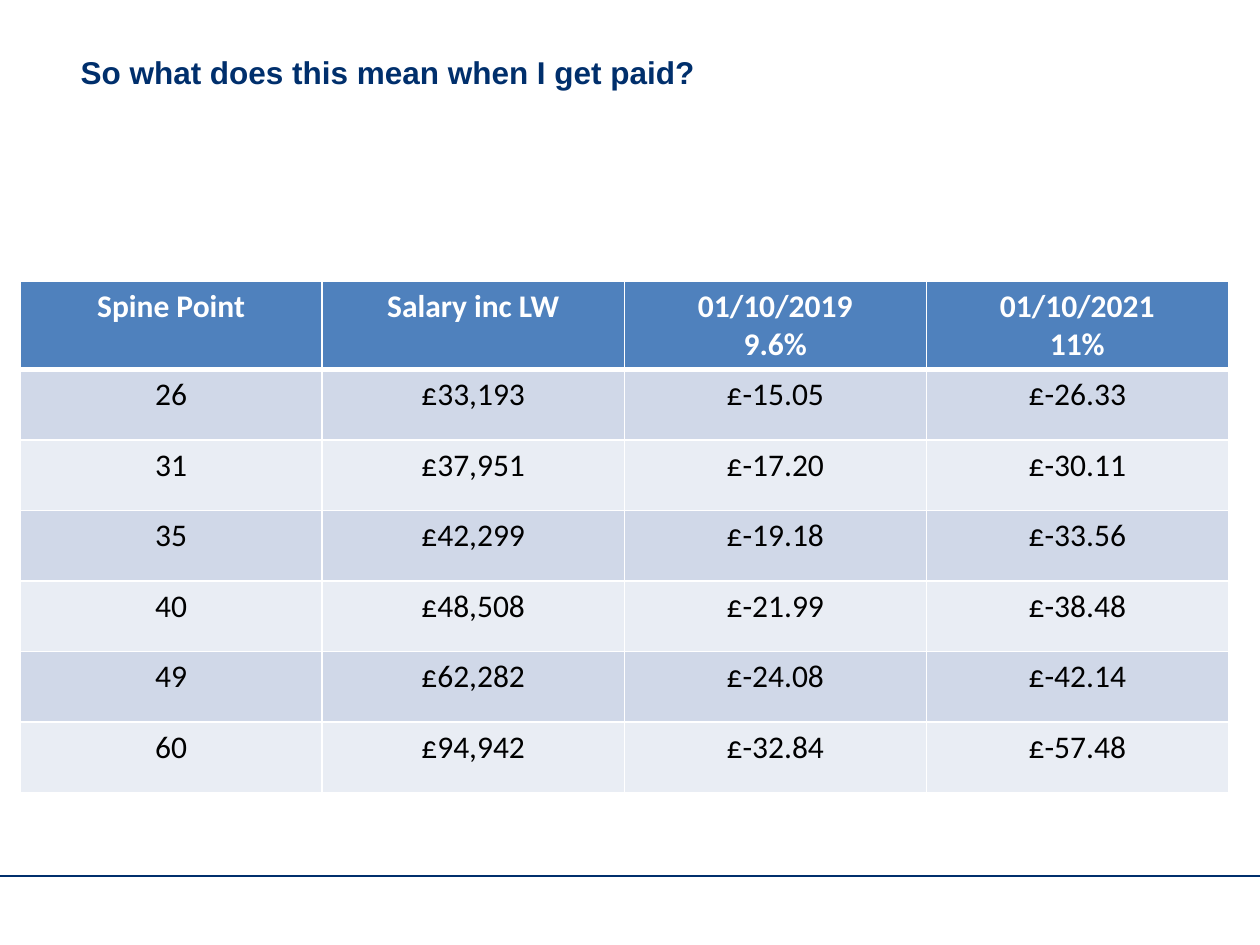
from lxml.etree import SubElement as sub
from pptx import Presentation
from pptx.dml.color import RGBColor as RGB
from pptx.enum.shapes import MSO_CONNECTOR as Conn
from pptx.enum.text import MSO_ANCHOR as Anchor, MSO_AUTO_SIZE as Auto, PP_ALIGN as Align
from pptx.oxml.ns import qn
from pptx.util import Inches, Pt

WIDE, HIGH = 10, 7.5
COLS = {"navy": "002F6C", "head": "4F81BD", "odd": "D0D8E8",
        "even": "E9EDF4", "white": "FFFFFF", "black": "000000"}
ROWS = [
    ("Spine Point", "Salary inc LW", "01/10/2019\n9.6%", "01/10/2021\n11%"),
    ("26", "£33,193", "£-15.05", "£-26.33"),
    ("31", "£37,951", "£-17.20", "£-30.11"),
    ("35", "£42,299", "£-19.18", "£-33.56"),
    ("40", "£48,508", "£-21.99", "£-38.48"),
    ("49", "£62,282", "£-24.08", "£-42.14"),
    ("60", "£94,942", "£-32.84", "£-57.48"),
]


def tint(name):
    return RGB.from_string(COLS[name])


def style(font, face, color, bold):
    font.name, font.size, font.bold = face, Pt(18), bold
    font.color.rgb = tint(color)


def add_rule(slide, y):
    rule = slide.shapes.add_connector(
        Conn.STRAIGHT, 0, Inches(y), Inches(WIDE), Inches(y))
    rule.line.color.rgb = tint("navy")
    rule.line.width = Pt(1)
    sub(rule._element.spPr, qn("a:effectLst"))


def set_title(slide, text):
    title = slide.shapes.title
    title.left, title.top = Inches(0.54), Inches(0.37)
    title.width, title.height = Inches(5.32), Inches(0.4)
    frame = title.text_frame
    frame.text = text
    frame.word_wrap = True
    frame.auto_size = Auto.SHAPE_TO_FIT_TEXT
    frame.vertical_anchor = Anchor.TOP
    para = frame.paragraphs[0]
    para.alignment = Align.LEFT
    style(para.runs[0].font, "Arial", "navy", True)


def edge(cell, widths):
    """Draw white cell borders; widths maps a side to points."""
    props = cell._tc.get_or_add_tcPr()
    for side, width in widths.items():
        line = sub(props, qn(f"a:ln{side}"), w=str(Pt(width)))
        fill = sub(line, qn("a:solidFill"))
        sub(fill, qn("a:srgbClr"), val=COLS["white"])


def fill_cell(cell, text, row):
    head = row == 0
    edge(cell, {"L": 1, "R": 1, "T": 3 if row == 1 else 1, "B": 3 if head else 1})
    cell.fill.solid()
    cell.fill.fore_color.rgb = tint("head" if head else "odd" if row % 2 else "even")
    cell.text_frame.text = text
    for para in cell.text_frame.paragraphs:
        para.alignment = Align.CENTER
        style(para.runs[0].font, "Calibri", "white" if head else "black", head)


def add_grid(slide, data, left, top, width, heights):
    table = slide.shapes.add_table(
        len(data), len(data[0]), Inches(left), Inches(top),
        Inches(width), Inches(sum(heights))).table
    for r, (texts, height) in enumerate(zip(data, heights)):
        table.rows[r].height = Inches(height)
        for c, text in enumerate(texts):
            fill_cell(table.cell(r, c), text, r)


def main():
    deck = Presentation()
    deck.slide_width, deck.slide_height = Inches(WIDE), Inches(HIGH)
    slide = deck.slides.add_slide(deck.slide_layouts[5])
    add_rule(slide, 6.95)
    add_grid(slide, ROWS, 0.16, 2.23, 9.59, [0.63] + [0.56] * (len(ROWS) - 1))
    set_title(slide, "So what does this mean when I get paid?")
    deck.save("out.pptx")


if __name__ == "__main__":
    main()
